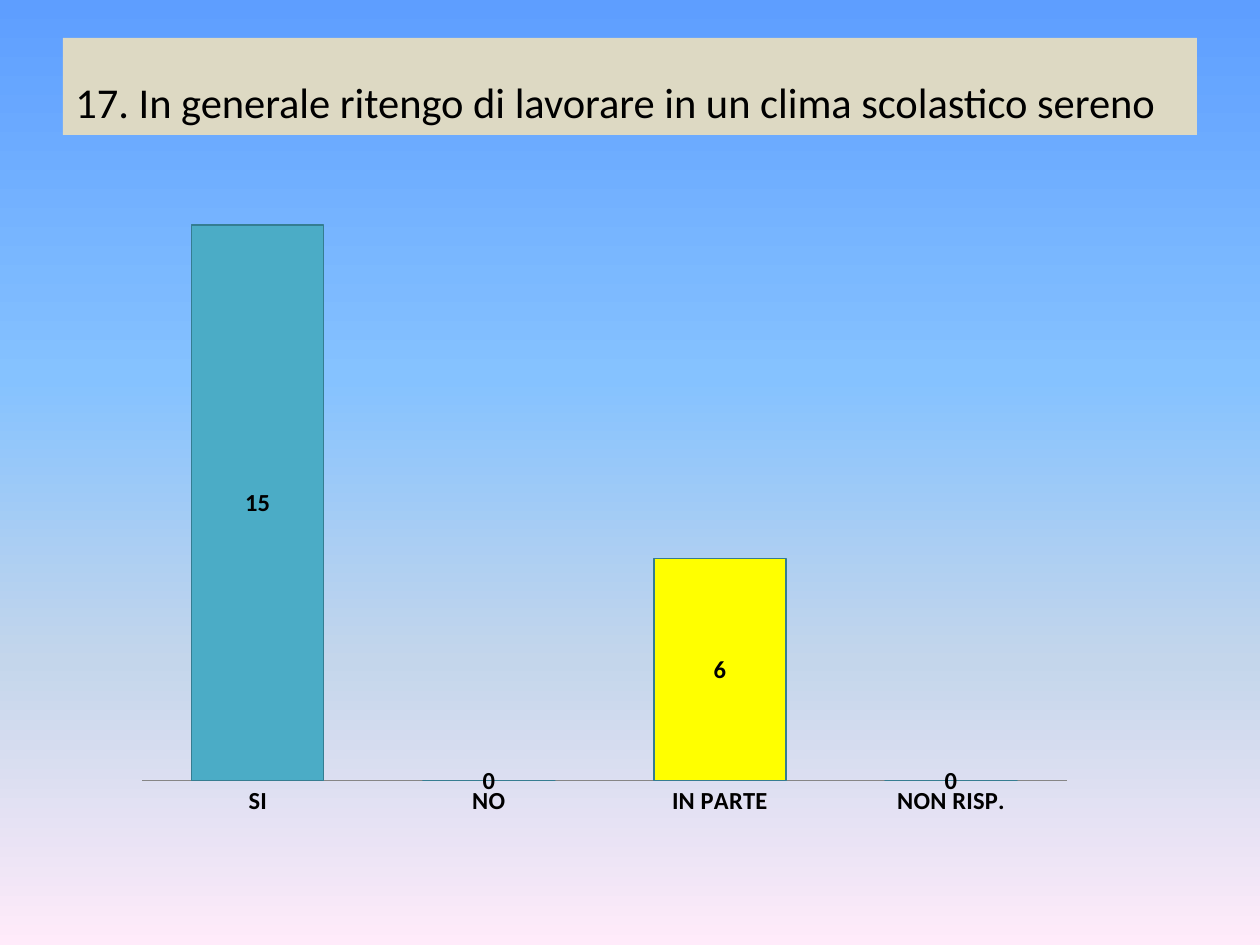
"""Build the survey slide for question 17 with its column chart of answers."""
from copy import deepcopy

from lxml.etree import SubElement
from pptx import Presentation
from pptx.chart.data import CategoryChartData
from pptx.dml.color import RGBColor
from pptx.enum.chart import XL_CHART_TYPE, XL_LABEL_POSITION, XL_TICK_MARK
from pptx.enum.shapes import MSO_SHAPE
from pptx.enum.text import MSO_ANCHOR, PP_ALIGN
from pptx.oxml.ns import qn
from pptx.util import Pt

PX = 914400 // 126
FONT = "Calibri"
COLORS = {
    "text": "000000", "banner": "DDD9C3", "axis": "868686", "outline": "357D91",
    "SI": "4BACC6", "NO": "FF0000", "IN PARTE": "FFFF00", "NON RISP.": "00B050",
}
SKY = [(0, "5E9EFF"), (40, "85C2FF"), (70, "C4D6EB"), (100, "FFEBFA")]
ANSWERS = {"SI": 15, "NO": 0, "IN PARTE": 6, "NON RISP.": 0}


def rgb(name):
    return RGBColor.from_string(COLORS[name])


def style_font(font, size, bold=False):
    font.name, font.size, font.bold = FONT, Pt(size), bold
    font.color.rgb = rgb("text")


prs = Presentation()
prs.slide_width, prs.slide_height = 1260 * PX, 945 * PX
slide = prs.slides.add_slide(prs.slide_layouts[6])

sky = slide.background.fill
sky.gradient()
sky.gradient_angle = 270
stop_list = slide.element.find(".//" + qn("a:gsLst"))
for _ in range(len(SKY) - len(stop_list)):
    stop_list.append(deepcopy(stop_list[0]))
for stop, (percent, color) in zip(sky.gradient_stops, SKY):
    stop.position = percent / 100
    stop.color.rgb = RGBColor.from_string(color)

question = slide.shapes.add_shape(MSO_SHAPE.RECTANGLE, 63 * PX, 38 * PX, 1134 * PX, 97 * PX)
question.shadow.inherit = False
question.fill.solid()
question.fill.fore_color.rgb = rgb("banner")
question.line.fill.background()
question_text = question.text_frame
question_text.word_wrap = True
question_text.vertical_anchor = MSO_ANCHOR.BOTTOM
question_text.margin_bottom = 8 * PX
question_line = question_text.paragraphs[0]
question_line.text = "17. In generale ritengo di lavorare in un clima scolastico sereno"
question_line.alignment = PP_ALIGN.LEFT
style_font(question_line.font, 24.3)

answer_data = CategoryChartData()
answer_data.categories = list(ANSWERS)
answer_data.add_series("Series 1", list(ANSWERS.values()))
chart = slide.shapes.add_chart(
    XL_CHART_TYPE.COLUMN_STACKED, 123 * PX, 175 * PX, 963 * PX, 655 * PX, answer_data
).chart
chart.has_legend = False
chart.has_title = False
style_font(chart.font, 10)

answer_axis = chart.category_axis
answer_axis.major_tick_mark = XL_TICK_MARK.NONE
answer_axis.format.line.color.rgb = rgb("axis")
style_font(answer_axis.tick_labels.font, 14, True)
count_axis = chart.value_axis
count_axis.visible = False
count_axis.has_major_gridlines = False
count_axis.minimum_scale, count_axis.maximum_scale = 0, 16

plot = chart.plots[0]
plot.vary_by_categories = False
plot.gap_width, plot.overlap = 75, 100
plot.has_data_labels = True
counts = plot.data_labels
counts.show_value = True
counts.position = XL_LABEL_POSITION.CENTER
style_font(counts.font, 14, True)

for index, answer in enumerate(ANSWERS):
    column = plot.series[0].points[index].format
    column.fill.solid()
    column.fill.fore_color.rgb = rgb(answer)
    column.line.color.rgb = rgb("outline")
    column.line.width = Pt(0.75)

plot_area = chart.element.find(".//" + qn("c:plotArea"))
layout = plot_area.find(qn("c:layout"))
if layout is None:
    layout = SubElement(plot_area, qn("c:layout"))
    plot_area.insert(0, layout)
manual = SubElement(layout, qn("c:manualLayout"))
for tag, value in [("layoutTarget", "inner"), ("xMode", "edge"), ("yMode", "edge"),
                   ("x", "0.02"), ("y", "0.02"), ("w", "0.96"), ("h", "0.905")]:
    SubElement(manual, qn("c:" + tag)).set("val", value)

prs.save("out.pptx")
